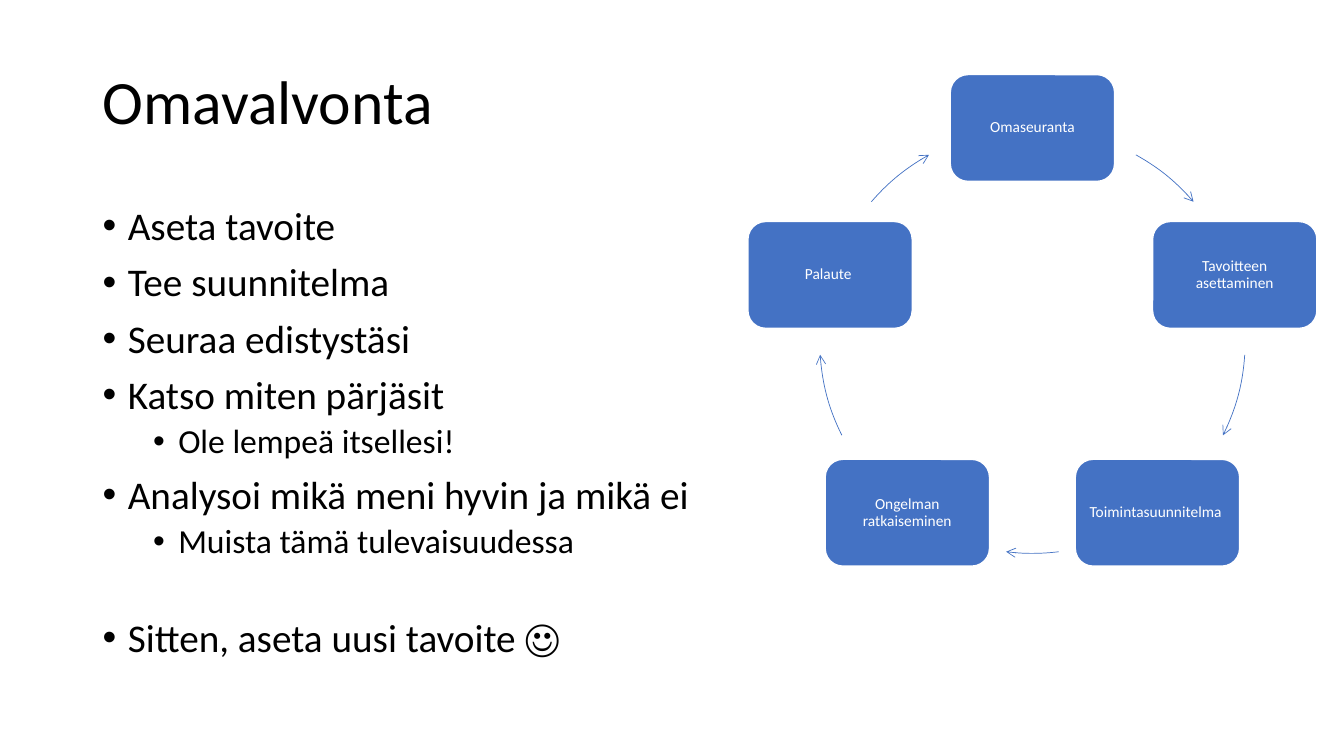
import math

from lxml import etree
from pptx import Presentation
from pptx.dml.color import RGBColor
from pptx.enum.shapes import MSO_SHAPE
from pptx.enum.text import MSO_ANCHOR, PP_ALIGN
from pptx.oxml.ns import qn
from pptx.util import Inches, Pt

ROUNDED = MSO_SHAPE.ROUNDED_RECTANGLE
ARC = MSO_SHAPE.ARC
MIDDLE = MSO_ANCHOR.MIDDLE
CENTER = PP_ALIGN.CENTER

FONT = "Calibri"
BLACK, WHITE, BLUE = "000000", "FFFFFF", "4472C4"

# Text, level, space before in points
ADVICE = [
    ("Aseta tavoite", 0, 10),
    ("Tee suunnitelma", 0, 10),
    ("Seuraa edistystäsi", 0, 10),
    ("Katso miten pärjäsit", 0, 10),
    ("Ole lempeä itsellesi!", 1, 5),
    ("Analysoi mikä meni hyvin ja mikä ei", 0, 10),
    ("Muista tämä tulevaisuudessa", 1, 5),
    ("Sitten, aseta uusi tavoite ☺", 0, 41),
]

# Steps clockwise from the top, with the start and end degrees of the arrow after each
STEPS = [
    ("Omaseuranta", 29.1, 49.2),
    ("Tavoitteen asettaminen", 93.8, 116.4),
    ("Toimintasuunnitelma ", 172.9, 187.1),
    ("Ongelman ratkaiseminen", 243.6, 266.2),
    ("Palaute ", 310.8, 330.9),
]
STEP_WIDTH, STEP_HEIGHT = 1.63, 1.06


def color(hex_code):
    return RGBColor.from_string(hex_code)


def write(para, text, size, hex_code):
    para.text = text
    para.line_spacing = 0.9
    for span in para.runs:
        span.font.name = FONT
        span.font.size = Pt(size)
        span.font.color.rgb = color(hex_code)


def add_bullet(para, level):
    properties = para._p.get_or_add_pPr()
    properties.set("marL", str(Inches(0.25 + 0.5 * level)))
    properties.set("indent", str(Inches(-0.25)))
    font = etree.SubElement(properties, qn("a:buFont"))
    font.set("typeface", "Arial")
    bullet = etree.SubElement(properties, qn("a:buChar"))
    bullet.set("char", "•")


def add_title(page, left, top, width, height):
    box = page.shapes.add_textbox(Inches(left), Inches(top), Inches(width), Inches(height))
    frame = box.text_frame
    frame.word_wrap = True
    frame.vertical_anchor = MIDDLE
    write(frame.paragraphs[0], "Omavalvonta", 44, BLACK)


def add_advice(page, left, top, width, height):
    box = page.shapes.add_textbox(Inches(left), Inches(top), Inches(width), Inches(height))
    frame = box.text_frame
    frame.word_wrap = True
    for index, (text, level, space) in enumerate(ADVICE):
        para = frame.add_paragraph() if index else frame.paragraphs[0]
        write(para, text, 24 if level else 28, BLACK)
        para.level = level
        para.space_before = Pt(space)
        add_bullet(para, level)


def add_step(page, center_x, center_y, text):
    step = page.shapes.add_shape(
        ROUNDED,
        Inches(center_x - STEP_WIDTH / 2), Inches(center_y - STEP_HEIGHT / 2),
        Inches(STEP_WIDTH), Inches(STEP_HEIGHT))
    step.shadow.inherit = False
    step.fill.solid()
    step.fill.fore_color.rgb = color(BLUE)
    step.line.color.rgb = color(WHITE)
    step.line.width = Pt(1)
    frame = step.text_frame
    frame.word_wrap = True
    frame.vertical_anchor = MIDDLE
    frame.margin_left = frame.margin_right = Inches(0.05)
    frame.margin_top = frame.margin_bottom = Inches(0.05)
    write(frame.paragraphs[0], text, 11, WHITE)
    frame.paragraphs[0].alignment = CENTER


def add_arrow(page, left, top, diameter, start, end):
    arrow = page.shapes.add_shape(
        ARC, Inches(left), Inches(top), Inches(diameter), Inches(diameter))
    arrow.shadow.inherit = False
    arrow.fill.background()
    arrow.line.color.rgb = color(BLUE)
    arrow.line.width = Pt(0.5)
    # Arc angles count from three o'clock; one degree is 0.6 adjustment units
    for index, angle in enumerate((start, end)):
        arrow.adjustments[index] = (angle - 90) % 360 * 0.6
    head = etree.SubElement(arrow.line._get_or_add_ln(), qn("a:tailEnd"))
    head.set("type", "arrow")


def add_cycle(page, left, top, diameter):
    radius = diameter / 2
    for index, (text, start, end) in enumerate(STEPS):
        angle = math.tau * index / len(STEPS)
        add_step(page, left + radius * (1 + math.sin(angle)),
                 top + radius * (1 - math.cos(angle)), text)
        add_arrow(page, left, top, diameter, start, end)


def main():
    deck = Presentation()
    deck.slide_width, deck.slide_height = Inches(13.33), Inches(7.5)
    page = deck.slides.add_slide(deck.slide_layouts[6])
    add_title(page, 0.92, 0.31, 11.5, 1.45)
    add_advice(page, 0.92, 2, 11.5, 4.76)
    add_cycle(page, 8.13, 1.27, 4.22)
    deck.save("out.pptx")


if __name__ == "__main__":
    main()
